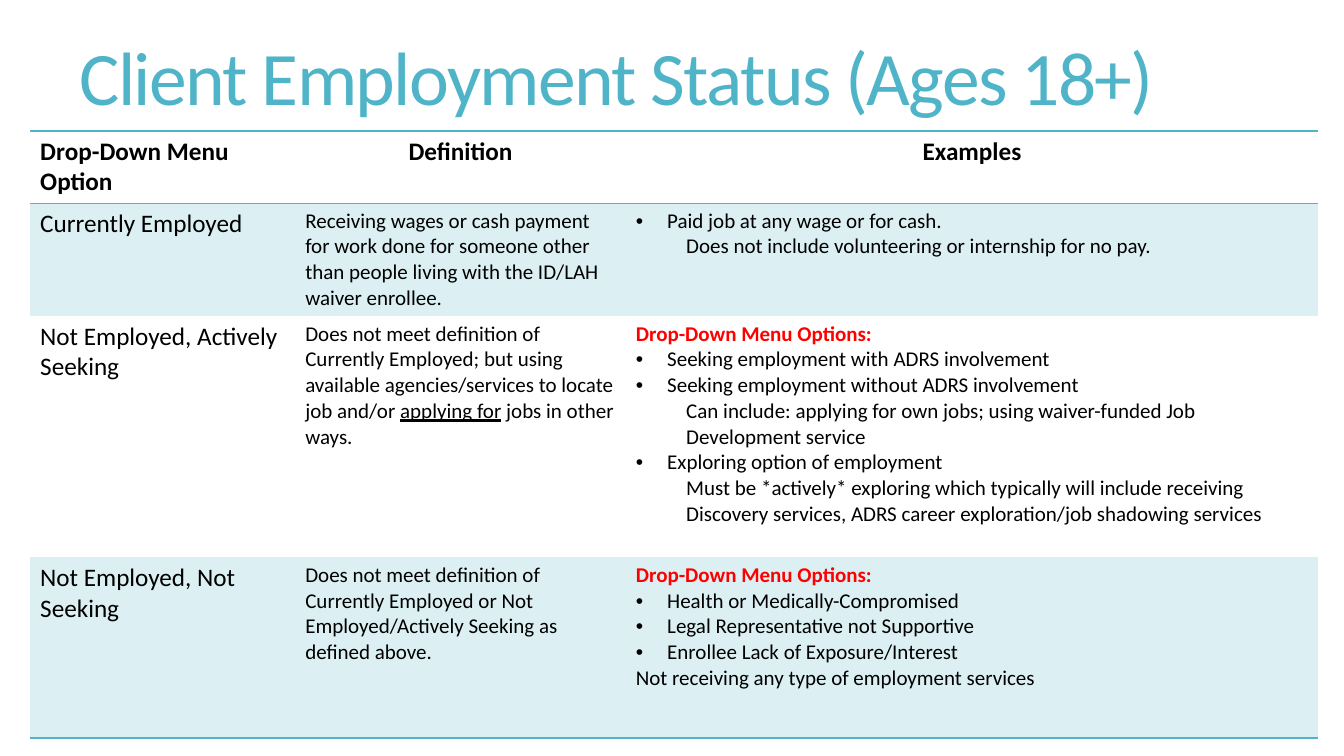
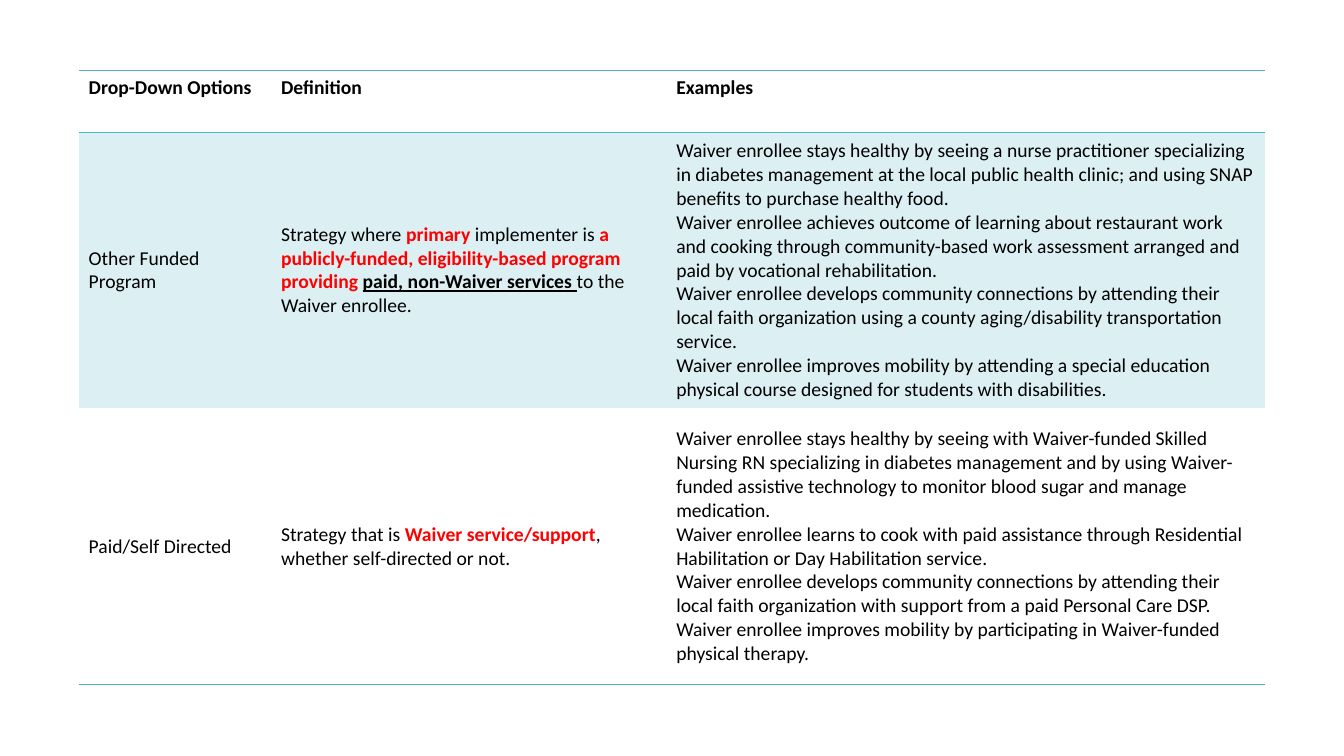
from lxml import etree
from pptx import Presentation
from pptx import util as u
from pptx.dml.color import RGBColor
from pptx.enum import text
from pptx.oxml.ns import qn

COLORS = {"accent": "50B4C8", "band": "DCF0F4", "ink": "000000", "alert": "FF0000"}
FONT = "Calibri"
PLAIN_TABLE_STYLE = "{2D5ABB26-0587-4C30-8999-92F81FD0307C}"
TITLE_ONLY, BLANK = 5, 6
LEFT, CENTER = text.PP_ALIGN.LEFT, text.PP_ALIGN.CENTER
TOP, MIDDLE = text.MSO_ANCHOR.TOP, text.MSO_ANCHOR.MIDDLE


# Text content: a paragraph is a string, a list of runs, or a (kind, string) pair
def strong(words, color="alert", underline=None):
    return words, {"bold": True, "color": color, "underline": underline}


def bullet(words):
    return "bullet", words


def detail(words):
    return "detail", words


def indent(paragraph, kind):
    props = paragraph._p.get_or_add_pPr()
    if kind == "bullet":
        props.set("marL", str(u.Cm(0.79)))
        props.set("indent", str(u.Cm(-0.79)))
        etree.SubElement(props, qn("a:buFont"), typeface="Arial")
        etree.SubElement(props, qn("a:buChar"), char="•")
    else:
        paragraph.level = 1
        props.set("marL", str(u.Cm(1.27)))
        props.set("indent", "0")


def add_run(paragraph, words, size, bold=False, color="ink", underline=None, spacing=None):
    run = paragraph.add_run()
    run.text = words
    font = run.font
    font.name, font.size, font.bold = FONT, u.Pt(size), bold
    font.underline = underline
    font.color.rgb = RGBColor.from_string(COLORS[color])
    if spacing is not None:
        run._r.get_or_add_rPr().set("spc", str(int(spacing * 100)))


def write(frame, paragraphs, align=LEFT, line_spacing=None, **style):
    """Fill a text frame; each run may override the shared style."""
    frame.word_wrap = True
    for index, content in enumerate(paragraphs):
        paragraph = frame.paragraphs[0] if index == 0 else frame.add_paragraph()
        if isinstance(content, tuple):
            kind, content = content
            indent(paragraph, kind)
        paragraph.alignment = align
        if line_spacing:
            paragraph.line_spacing = line_spacing
        for run in [content] if isinstance(content, str) else content:
            words, override = (run, {}) if isinstance(run, str) else run
            add_run(paragraph, words, **{**style, **override})


# Shared parts
def add_title(slide, box, words):
    title = slide.shapes.title
    title.left, title.top, title.width, title.height = (u.Cm(v) for v in box)
    frame = title.text_frame
    frame.auto_size = text.MSO_AUTO_SIZE.NONE
    frame.vertical_anchor = MIDDLE
    write(frame, [words], line_spacing=0.85, size=54, color="accent", spacing=-1.2)


def rule(cell, side):
    line = etree.SubElement(cell._tc.get_or_add_tcPr(), qn(f"a:ln{side}"), w=str(u.Pt(1)))
    fill = etree.SubElement(line, qn("a:solidFill"))
    etree.SubElement(fill, qn("a:srgbClr"), val=COLORS["accent"])


def add_options_table(slide, corner, widths, heights, rows, sizes,
                      header_size, header_aligns, body_anchor):
    """Header row ruled above and below, tinted odd rows, closing rule."""
    box = (*corner, sum(widths), sum(heights))
    table = slide.shapes.add_table(len(rows), len(widths), *(u.Cm(v) for v in box)).table
    table.horz_banding = False
    table._tbl.tblPr.find(qn("a:tableStyleId")).text = PLAIN_TABLE_STYLE
    for column, width in zip(table.columns, widths):
        column.width = u.Cm(width)
    for row, height in zip(table.rows, heights):
        row.height = u.Cm(height)

    for r, row in enumerate(rows):
        header = r == 0
        for c, paragraphs in enumerate(row):
            cell = table.cell(r, c)
            if header:
                rule(cell, "T")
            if header or r == len(rows) - 1:
                rule(cell, "B")
            if r % 2:
                cell.fill.solid()
                cell.fill.fore_color.rgb = RGBColor.from_string(COLORS["band"])
            else:
                cell.fill.background()
            cell.vertical_anchor = TOP if header else body_anchor
            write(cell.text_frame, paragraphs, bold=header,
                  align=header_aligns[c] if header else LEFT,
                  size=header_size if header else sizes[c])


# Slides
def employment_slide(deck):
    slide = deck.slides.add_slide(deck.slide_layouts[TITLE_ONLY])
    add_title(slide, (1.75, -0.23, 29.92, 4.6), "Client Employment Status (Ages 18+)")
    menu_heading = [strong("Drop-Down Menu Options:")]
    rows = [
        [["Drop-Down Menu Option"], ["Definition"], ["Examples"]],
        [["Currently Employed"],
         ["Receiving wages or cash payment for work done for someone other than "
          "people living with the ID/LAH waiver enrollee."],
         [bullet("Paid job at any wage or for cash."),
          detail("Does not include volunteering or internship for no pay.")]],
        [["Not Employed, Actively Seeking"],
         [["Does not meet definition of Currently Employed; but using available "
           "agencies/services to locate job and/or ",
           ("applying for", {"underline": True}), " jobs in other ways."]],
         [menu_heading,
          bullet("Seeking employment with ADRS involvement"),
          bullet("Seeking employment without ADRS involvement"),
          detail("Can include: applying for own jobs; using waiver-funded Job "
                 "Development service"),
          bullet("Exploring option of employment"),
          detail("Must be *actively* exploring which typically will include receiving "
                 "Discovery services, ADRS career exploration/job shadowing services")]],
        [["Not Employed, Not Seeking"],
         ["Does not meet definition of Currently Employed or Not Employed/Actively "
          "Seeking as defined above."],
         [menu_heading,
          bullet("Health or Medically-Compromised"),
          bullet("Legal Representative not Supportive"),
          bullet("Enrollee Lack of Exposure/Interest"),
          "Not receiving any type of employment services"]],
    ]
    add_options_table(slide, (0.76, 3.3), (6.68, 8.33, 17.45), (1.82, 2.84, 6.08, 4.55),
                      rows, sizes=(18, 15, 15), header_size=18,
                      header_aligns=(LEFT, CENTER, CENTER), body_anchor=TOP)


def strategy_slide(deck):
    slide = deck.slides.add_slide(deck.slide_layouts[BLANK])
    rows = [
        [["Drop-Down Options"], ["Definition"], ["Examples"]],
        [["Other Funded Program"],
         [["Strategy where ", strong("primary"), " implementer is ",
           strong("a publicly-funded, eligibility-based program providing "),
           strong("paid, non-Waiver services ", color="ink", underline=True),
           "to the Waiver enrollee."]],
         ["Waiver enrollee stays healthy by seeing a nurse practitioner specializing in "
          "diabetes management at the local public health clinic; and using SNAP "
          "benefits to purchase healthy food.",
          "Waiver enrollee achieves outcome of learning about restaurant work and "
          "cooking through community-based work assessment arranged and paid by "
          "vocational rehabilitation.",
          "Waiver enrollee develops community connections by attending their local "
          "faith organization using a county aging/disability transportation service.",
          "Waiver enrollee improves mobility by attending a special education physical "
          "course designed for students with disabilities."]],
        [["Paid/Self Directed"],
         [["Strategy that is ", strong("Waiver service/support"),
           ", whether self-directed or not."]],
         ["Waiver enrollee stays healthy by seeing with Waiver-funded Skilled Nursing RN "
          "specializing in diabetes management and by using Waiver-funded assistive "
          "technology to monitor blood sugar and manage medication.",
          "Waiver enrollee learns to cook with paid assistance through Residential "
          "Habilitation or Day Habilitation service.",
          "Waiver enrollee develops community connections by attending their local "
          "faith organization with support from a paid Personal Care DSP.",
          "Waiver enrollee improves mobility by participating in Waiver-funded "
          "physical therapy."]],
    ]
    add_options_table(slide, (1.98, 1.78), (4.85, 9.96, 15.09), (1.55, 6.96, 6.96),
                      rows, sizes=(14, 14, 14), header_size=14,
                      header_aligns=(LEFT, LEFT, LEFT), body_anchor=MIDDLE)


def main():
    deck = Presentation()
    deck.slide_width, deck.slide_height = u.Cm(33.87), u.Cm(19.05)
    employment_slide(deck)
    strategy_slide(deck)
    deck.save("out.pptx")


if __name__ == "__main__":
    main()
